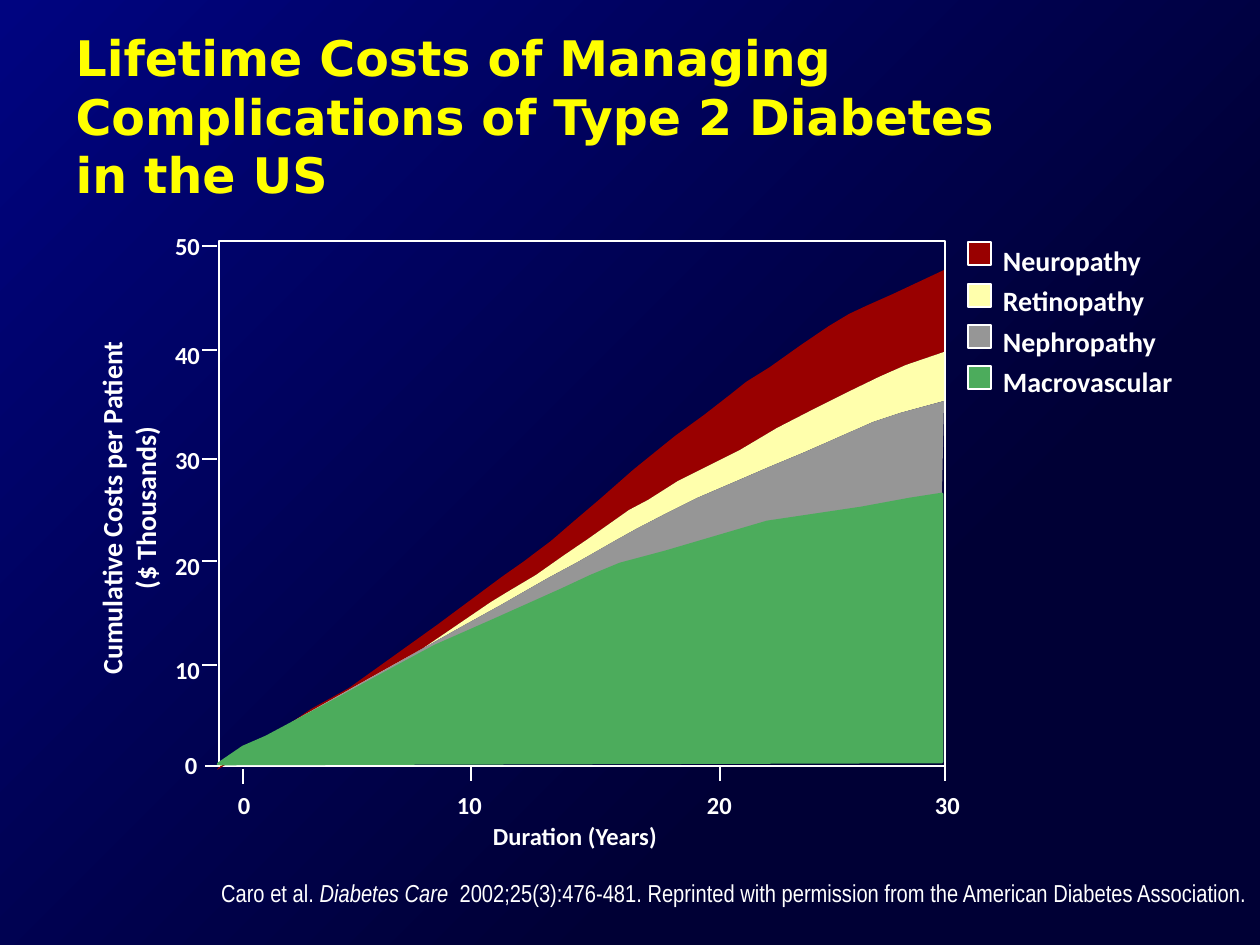
from pptx import Presentation
from pptx.dml.color import RGBColor as RGB
from pptx.enum.shapes import MSO_CONNECTOR as CONNECTOR, MSO_SHAPE as SHAPE
from pptx.enum.text import MSO_ANCHOR as ANCHOR, PP_ALIGN as ALIGN
from pptx.oxml.ns import qn
from pptx.util import Pt
from lxml.etree import SubElement

SCALE = 914400 / 126
COLORS = {
    "white": "FFFFFF", "title": "FFFF00", "bright": "000480", "dark": "000035",
    "Neuropathy": "990000", "Retinopathy": "FFFFAC",
    "Nephropathy": "969696", "Macrovascular": "4CAC5C",
}
COLORS = {name: RGB.from_string(value) for name, value in COLORS.items()}


def px(*values):
    return [round(value * SCALE) for value in values]


def add_text(text, box, size=14, font="Calibri", bold=True, align=ALIGN.LEFT,
             inset=(0, 0), wrap=False, spacing=None, rotation=0):
    shape = slide.shapes.add_textbox(*px(*box))
    shape.rotation = rotation
    frame = shape.text_frame
    frame.word_wrap = wrap
    frame.margin_left = frame.margin_right = px(inset[0])[0]
    frame.margin_top = frame.margin_bottom = px(inset[1])[0]
    for number, line in enumerate(text.split("\n")):
        paragraph = frame.add_paragraph() if number else frame.paragraphs[0]
        paragraph.alignment = align
        paragraph.line_spacing = spacing
        for index, part in enumerate(line.split("*")):
            run = paragraph.add_run()
            run.text = part
            run.font.name = font
            run.font.size = Pt(size)
            run.font.bold = bold
            run.font.italic = index % 2 == 1
            run.font.color.rgb = COLORS["white"]


presentation = Presentation()
presentation.slide_width, presentation.slide_height = px(1260, 945)
slide = presentation.slides.add_slide(presentation.slide_layouts[5])

background = slide.background.fill
background.gradient()
background.gradient_angle = 315
for stop, name, position in zip(background.gradient_stops, ("bright", "dark"), (0, 0.7)):
    stop.color.rgb = COLORS[name]
    stop.position = position

title = slide.shapes.title
title.left, title.top, title.width, title.height = px(63, 21, 980, 158)
title.text_frame.text = "Lifetime Costs of Managing Complications of Type 2 Diabetes in the US"
title.text_frame.vertical_anchor = ANCHOR.TOP
title.text_frame.word_wrap = True
paragraph = title.text_frame.paragraphs[0]
paragraph.alignment = ALIGN.LEFT
paragraph.font.name = "DejaVu Sans"
paragraph.font.size = Pt(28)
paragraph.font.bold = True
paragraph.font.color.rgb = COLORS["title"]

plot = slide.shapes.add_shape(SHAPE.RECTANGLE, *px(219, 241, 726, 525))
plot.shadow.inherit = False
plot.fill.background()
plot.line.color.rgb = COLORS["white"]
plot.line.width = Pt(0.75)

upper_edges = {
    "Neuropathy": [
        (217, 770), (266, 740), (311, 709), (349, 688), (437, 625), (503, 576),
        (523, 562), (551, 541), (573, 522), (600, 499), (633, 470), (649, 457),
        (675, 436), (704, 415), (731, 394), (746, 382), (770, 367), (801, 345),
        (829, 326), (849, 314), (866, 306), (893, 294), (944, 270)],
    "Retinopathy": [
        (219, 767), (273, 735), (335, 699), (422, 649), (491, 602), (509, 591),
        (536, 575), (563, 556), (588, 539), (629, 510), (648, 500), (678, 481),
        (708, 466), (740, 450), (777, 428), (816, 408), (848, 392), (879, 377),
        (906, 365), (944, 352)],
    "Nephropathy": [
        (218, 766), (261, 741), (299, 718), (363, 682), (413, 654), (461, 627),
        (499, 606), (548, 578), (576, 563), (611, 543), (636, 529), (667, 513),
        (697, 498), (732, 483), (769, 467), (805, 452), (839, 437), (873, 422),
        (900, 413), (944, 401)],
    "Macrovascular": [
        (218, 764), (243, 747), (266, 737), (341, 697), (396, 667), (435, 646),
        (494, 620), (561, 590), (591, 576), (620, 564), (665, 552), (767, 522),
        (861, 508), (910, 499), (942, 494)],
}
baseline = [(218, 764), (942, 762)]
lower_edges = list(upper_edges.values())[1:] + [baseline]
for (name, upper), lower in zip(upper_edges.items(), lower_edges):
    outline = upper + lower[::-1]
    builder = slide.shapes.build_freeform(*outline[0], scale=SCALE)
    builder.add_line_segments(outline[1:], close=True)
    area = builder.convert_to_shape()
    area.shadow.inherit = False
    area.fill.solid()
    area.fill.fore_color.rgb = COLORS[name]
    area.line.fill.background()
    if name == "Macrovascular":
        area.line.color.rgb = COLORS[name]
        area.line.width = Pt(1.5)

cost_ticks = [(202, y, 217, y) for y in (246, 350, 459, 561, 665)] + [(205, 766, 220, 766)]
year_ticks = [(x, 766, x, 781) for x in (471, 720, 945)] + [(243, 769, 243, 784)]
for ends in cost_ticks + year_ticks:
    tick = slide.shapes.add_connector(CONNECTOR.STRAIGHT, *px(*ends))
    tick.line.color.rgb = COLORS["white"]
    tick.line.width = Pt(0.75)
    SubElement(tick._element.spPr, qn("a:effectLst"))

for label, left, top in (("50", 175, 231), ("40", 175, 340), ("30", 175, 445),
                         ("20", 175, 551), ("10", 175, 655), ("0", 185, 750)):
    add_text(label, (left, top, 32, 30))
for label, left in (("0", 238), ("10", 457), ("20", 707), ("30", 935)):
    add_text(label, (left, 790, 28, 30))
add_text("Duration (Years)", (493, 821, 190, 30))
add_text("Cumulative Costs per Patient\n($ Thousands)", (-68, 474, 393, 68),
         size=16, align=ALIGN.CENTER, rotation=270)

add_text("\n".join(upper_edges), (990, 231, 238, 175), size=16,
         inset=(13, 6), wrap=True, spacing=1.2)
for name, top in zip(upper_edges, (242, 284, 325, 366)):
    key = slide.shapes.add_shape(SHAPE.RECTANGLE, *px(968, top, 23, 23))
    key.shadow.inherit = False
    key.fill.solid()
    key.fill.fore_color.rgb = COLORS[name]
    key.line.color.rgb = COLORS["white"]
    key.line.width = Pt(0.75)

add_text("Caro et al. *Diabetes Care*  2002;25(3):476-481. Reprinted with permission "
         "from the American Diabetes Association.", (63, 872, 1197, 63),
         font="Arial Narrow", bold=False, align=ALIGN.RIGHT, inset=(13, 6), wrap=True)

presentation.save("out.pptx")
